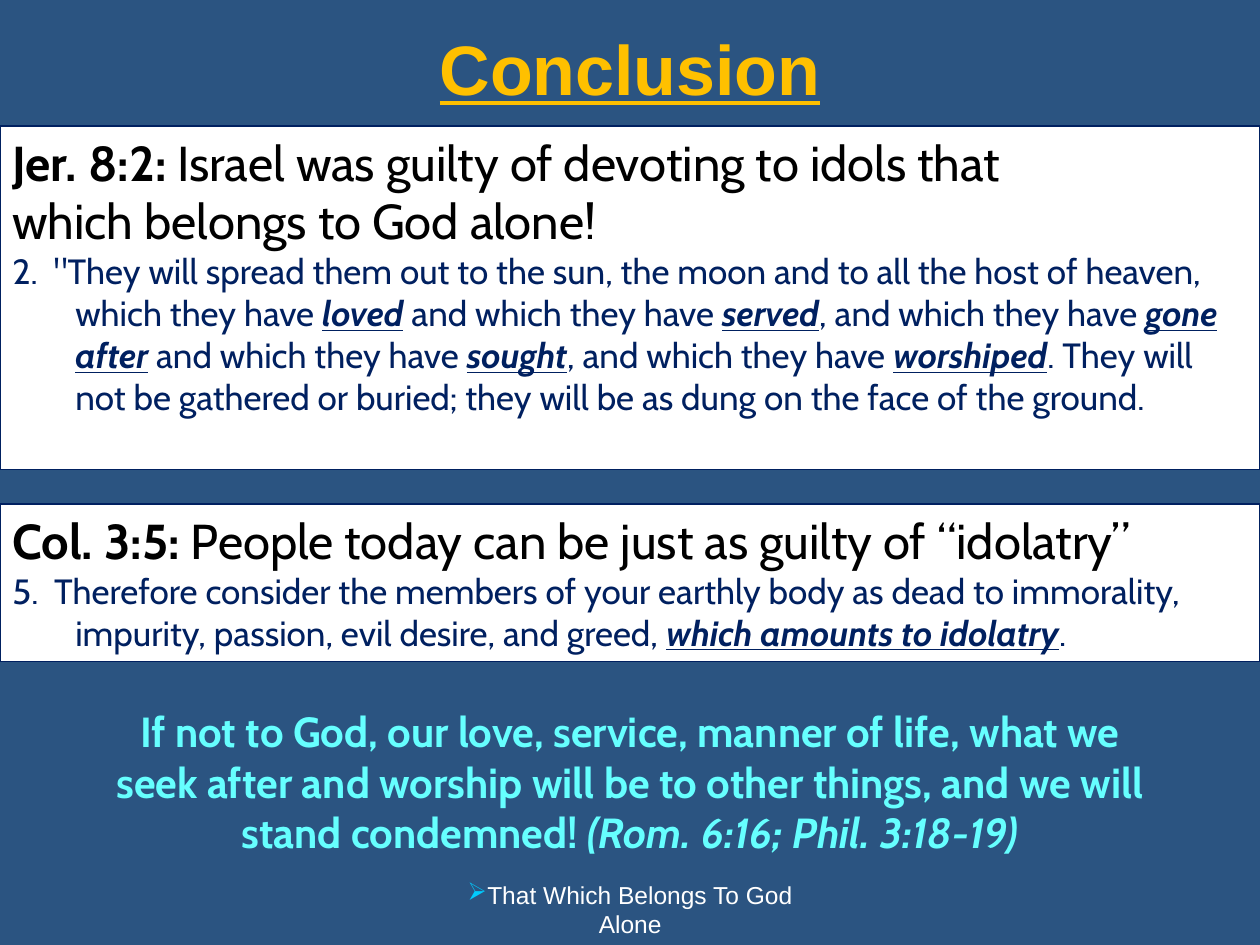
from lxml import etree
from pptx import Presentation
from pptx.dml.color import RGBColor
from pptx.enum.shapes import MSO_SHAPE
from pptx.enum.text import MSO_ANCHOR, PP_ALIGN
from pptx.oxml.ns import qn
from pptx.util import Cm, Pt

RECTANGLE = MSO_SHAPE.RECTANGLE
TOP, MIDDLE, BOTTOM = MSO_ANCHOR.TOP, MSO_ANCHOR.MIDDLE, MSO_ANCHOR.BOTTOM
LEFT, CENTER = PP_ALIGN.LEFT, PP_ALIGN.CENTER

WIDTH, HEIGHT = 25.4, 19.05
HANG = 1.27
BLUE, NAVY, WHITE, GOLD = "2B5481", "002060", "FFFFFF", "FFC000"
BLACK, AQUA, CYAN = "000000", "66FFFF", "00CCFF"

STYLES = {
    "title": {"size": 40, "font": "Arial", "color": GOLD, "base": "bu", "strong": "bu"},
    "heading": {"size": 28, "font": "Cabin", "color": BLACK, "base": "", "strong": "b"},
    "verse": {"size": 20, "font": "Cabin", "color": NAVY, "base": "", "strong": "biu"},
    "closing": {"size": 24, "font": "Cabin", "color": AQUA, "base": "b", "strong": "bi"},
    "footer": {"size": 14, "font": "Arial", "color": WHITE, "base": "", "strong": ""},
}

TITLE = [("title", "Conclusion")]
PASSAGES = [
    (2.54, 6.93, [
        ("heading", "*Jer. 8:2: *Israel was guilty of devoting to idols that"),
        ("heading", "which belongs to God alone!"),
        ("verse", "2.  \"They will spread them out to the sun, the moon and to all the host of "
                  "heaven, which they have *loved* and which they have *served*, and which they "
                  "have *gone after* and which they have *sought*, and which they have "
                  "*worshiped*. They will not be gathered or buried; they will be as dung on "
                  "the face of the ground."),
    ]),
    (10.16, 3.17, [
        ("heading", "*Col. 3:5: *People today can be just as guilty of “idolatry”"),
        ("verse", "5.  Therefore consider the members of your earthly body as dead to "
                  "immorality, impurity, passion, evil desire, and greed, "
                  "*which amounts to idolatry*."),
    ]),
]
CLOSING = [
    ("closing", "If not to God, our love, service, manner of life, what we"),
    ("closing", "seek after and worship will be to other things, and we will"),
    ("closing", "stand condemned! *(Rom. 6:16; Phil. 3:18-19)*"),
]
FOOTER = [("footer", "That Which Belongs To God Alone")]


def rgb(code):
    """Turn a hex string into a colour."""
    return RGBColor.from_string(code)


def set_indent(para, margin):
    """Give a paragraph a hanging indent of the given centimetres."""
    properties = para._p.get_or_add_pPr()
    properties.set("marL", str(Cm(margin)))
    properties.set("indent", str(-Cm(margin)))


def add_arrow_bullet(para):
    """Put a coloured arrow bullet on a paragraph."""
    set_indent(para, 0)
    properties = para._p.get_or_add_pPr()
    color = etree.SubElement(properties, qn("a:buClr"))
    etree.SubElement(color, qn("a:srgbClr"), val=CYAN)
    etree.SubElement(properties, qn("a:buFont"), typeface="Wingdings")
    etree.SubElement(properties, qn("a:buChar"), char="Ø")


def write(shape, lines, align, anchor, hang=0):
    """Fill a shape with styled lines, where asterisks enclose strong text."""
    frame = shape.text_frame
    frame.word_wrap = True
    frame.vertical_anchor = anchor
    for index, (name, text) in enumerate(lines):
        para = frame.add_paragraph() if index else frame.paragraphs[0]
        para.alignment = align
        if hang:
            set_indent(para, hang)
        style = STYLES[name]
        for position, part in enumerate(text.split("*")):
            if not part:
                continue
            span = para.add_run()
            span.text = part
            flags = style["strong" if position % 2 else "base"]
            font = span.font
            font.name, font.size = style["font"], Pt(style["size"])
            font.color.rgb = rgb(style["color"])
            font.bold, font.italic, font.underline = (flag in flags for flag in "biu")


def add_text(page, left, top, width, height):
    """Add an empty text box measured in centimetres."""
    return page.shapes.add_textbox(Cm(left), Cm(top), Cm(width), Cm(height))


def add_passage(page, top, height, lines):
    """Add a full-width white panel with a heading and its verse."""
    panel = page.shapes.add_shape(RECTANGLE, 0, Cm(top), Cm(WIDTH), Cm(height))
    panel.shadow.inherit = False
    panel.fill.solid()
    panel.fill.fore_color.rgb = rgb(WHITE)
    panel.line.color.rgb = rgb(NAVY)
    panel.line.width = Pt(0.75)
    write(panel, lines, LEFT, TOP, HANG)


def main():
    """Build the slide and save it."""
    deck = Presentation()
    deck.slide_width, deck.slide_height = Cm(WIDTH), Cm(HEIGHT)
    page = deck.slides.add_slide(deck.slide_layouts[5])
    page.background.fill.solid()
    page.background.fill.fore_color.rgb = rgb(BLUE)

    title = page.shapes.title
    title.left, title.top, title.width, title.height = 0, Cm(0.58), Cm(WIDTH), Cm(1.55)
    write(title, TITLE, CENTER, MIDDLE)

    for top, height, lines in PASSAGES:
        add_passage(page, top, height, lines)

    write(add_text(page, 0, 14.1, WIDTH, 3.33), CLOSING, CENTER, TOP, HANG)

    footer = add_text(page, 8.68, 18.21, 8.05, 0.84)
    add_arrow_bullet(footer.text_frame.paragraphs[0])
    write(footer, FOOTER, CENTER, BOTTOM)

    deck.save("out.pptx")


if __name__ == "__main__":
    main()
